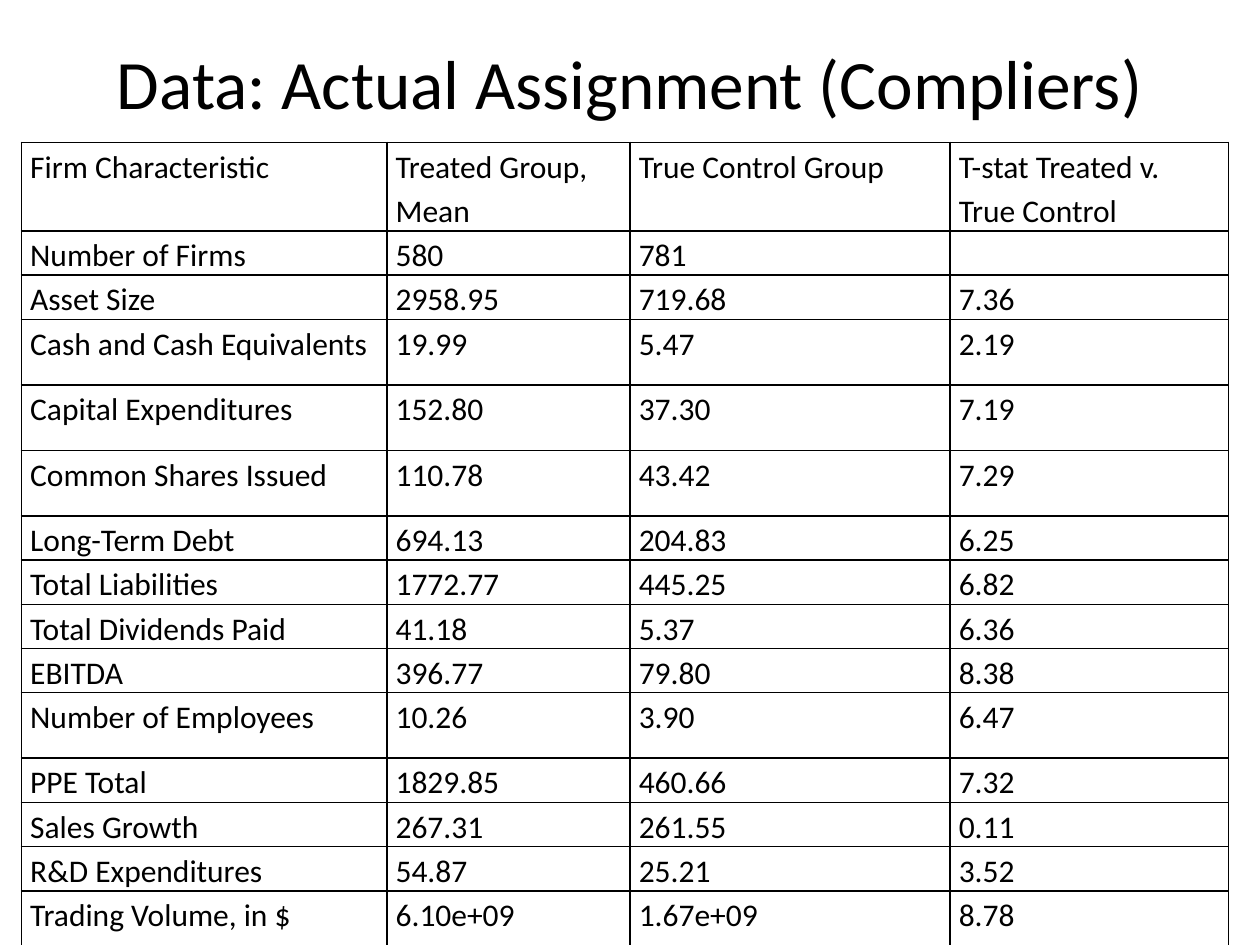
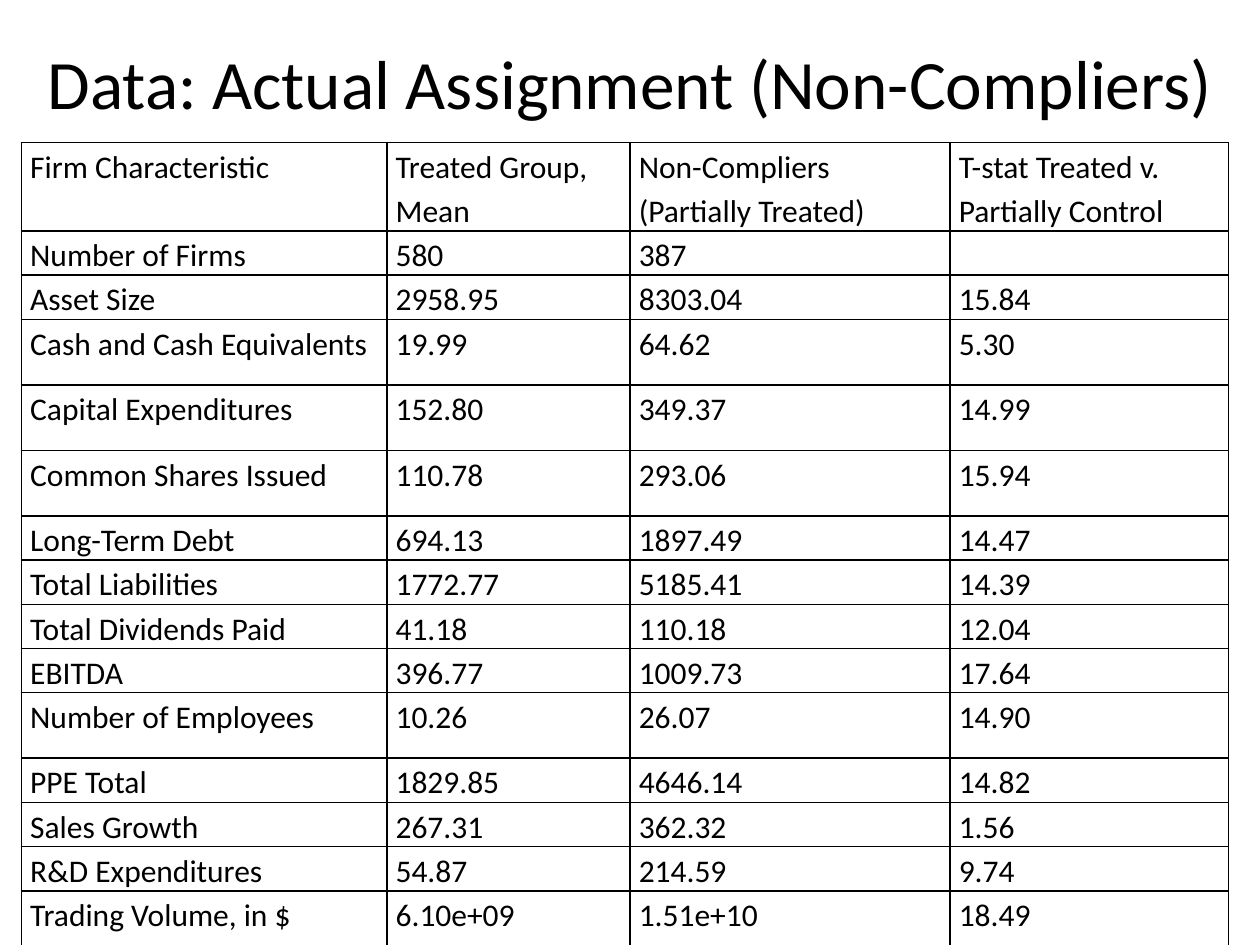
from dataclasses import dataclass

from lxml import etree
from pptx import Presentation
from pptx.dml.color import RGBColor
from pptx.enum.text import MSO_ANCHOR, MSO_AUTO_SIZE, PP_ALIGN
from pptx.oxml.ns import qn
from pptx.slide import Slide
from pptx.table import _Cell
from pptx.text.text import _Paragraph
from pptx.util import Inches, Pt

BLACK = RGBColor(0x00, 0x00, 0x00)
FONT = "Calibri"
TITLE_SIZE = Pt(39.6)
TABLE_SIZE = Pt(18)
BORDER_WIDTH = Pt(1)
CENTER = PP_ALIGN.CENTER
MIDDLE = MSO_ANCHOR.MIDDLE
NO_AUTOFIT = MSO_AUTO_SIZE.NONE
TITLE_ONLY = 5

SLIDE_WIDTH = Inches(10)
TABLE_LEFT, TABLE_TOP = Inches(0.17), Inches(1.13)
TABLE_WIDTH, TABLE_HEIGHT = Inches(9.58), Inches(6.39)
COLUMN_WIDTHS = [Inches(width) for width in (2.9, 1.93, 2.54, 2.21)]
HEADER_HEIGHT, SINGLE_HEIGHT, DOUBLE_HEIGHT = Inches(0.64), Inches(0.26), Inches(0.52)
CELL_INSET = Inches(0.07)

TALL_ROWS = {
    "Cash and Cash Equivalents",
    "Capital Expenditures",
    "Common Shares Issued",
    "Number of Employees",
    "Trading Volume, in $",
}
TREATED_MEANS = {
    "Number of Firms": "580",
    "Asset Size": "2958.95",
    "Cash and Cash Equivalents": "19.99",
    "Capital Expenditures": "152.80",
    "Common Shares Issued": "110.78",
    "Long-Term Debt": "694.13",
    "Total Liabilities": "1772.77",
    "Total Dividends Paid": "41.18",
    "EBITDA": "396.77",
    "Number of Employees": "10.26",
    "PPE Total": "1829.85",
    "Sales Growth": "267.31",
    "R&D Expenditures": "54.87",
    "Trading Volume, in $": "6.10e+09",
}


@dataclass(frozen=True)
class Comparison:
    """One slide: the treated firms set against another group."""
    title: str
    title_margin: int
    group: str
    statistic: str
    group_means: tuple[str, ...]
    t_stats: tuple[str, ...]


COMPARISONS = (
    Comparison(
        "Data: Actual Assignment (Compliers)", Inches(0.5),
        "True Control Group", "T-stat Treated v. True Control",
        ("781", "719.68", "5.47", "37.30", "43.42", "204.83", "445.25",
         "5.37", "79.80", "3.90", "460.66", "261.55", "25.21", "1.67e+09"),
        ("", "7.36", "2.19", "7.19", "7.29", "6.25", "6.82",
         "6.36", "8.38", "6.47", "7.32", "0.11", "3.52", "8.78"),
    ),
    Comparison(
        "Data: Actual Assignment (Non-Compliers)", Inches(0),
        "Non-Compliers (Partially Treated)", "T-stat Treated v. Partially Control",
        ("387", "8303.04", "64.62", "349.37", "293.06", "1897.49", "5185.41",
         "110.18", "1009.73", "26.07", "4646.14", "362.32", "214.59", "1.51e+10"),
        ("", "15.84", "5.30", "14.99", "15.94", "14.47", "14.39",
         "12.04", "17.64", "14.90", "14.82", "1.56", "9.74", "18.49"),
    ),
)


def add_span(para: _Paragraph, text: str, size: int) -> None:
    span = para.add_run()
    span.text = text
    span.font.name = FONT
    span.font.size = size
    span.font.color.rgb = BLACK


def add_title(slide: Slide, text: str, margin: int) -> None:
    box = slide.shapes.title
    box.left, box.top = margin, Inches(0.3)
    box.width, box.height = SLIDE_WIDTH - 2 * margin, Inches(0.7)
    frame = box.text_frame
    frame.auto_size = NO_AUTOFIT
    frame.word_wrap = True
    frame.vertical_anchor = MIDDLE
    para = frame.paragraphs[0]
    para.alignment = CENTER
    add_span(para, text, TITLE_SIZE)


def add_borders(cell: _Cell) -> None:
    properties = cell._tc.get_or_add_tcPr()
    for position, side in enumerate(("lnL", "lnR", "lnT", "lnB")):
        line = etree.Element(qn(f"a:{side}"), w=str(BORDER_WIDTH))
        fill = etree.SubElement(line, qn("a:solidFill"))
        etree.SubElement(fill, qn("a:srgbClr"), val=str(BLACK))
        properties.insert(position, line)


def fill_cell(cell: _Cell, text: str) -> None:
    cell.margin_left = cell.margin_right = CELL_INSET
    cell.margin_top = cell.margin_bottom = 0
    cell.fill.background()
    add_borders(cell)
    para = cell.text_frame.paragraphs[0]
    para.line_spacing = 1.15
    if text:
        add_span(para, text, TABLE_SIZE)


def row_height(label: str) -> int:
    return DOUBLE_HEIGHT if label in TALL_ROWS else SINGLE_HEIGHT


def add_comparison_table(slide: Slide, comparison: Comparison) -> None:
    header = ("Firm Characteristic", "Treated Group, Mean",
              comparison.group, comparison.statistic)
    rows = [header, *zip(TREATED_MEANS, TREATED_MEANS.values(),
                         comparison.group_means, comparison.t_stats)]
    heights = [HEADER_HEIGHT, *map(row_height, TREATED_MEANS)]

    box = slide.shapes.add_table(len(rows), len(header), TABLE_LEFT, TABLE_TOP,
                                 TABLE_WIDTH, TABLE_HEIGHT)
    table = box.table
    table.first_row = table.horz_banding = False
    for column, width in zip(table.columns, COLUMN_WIDTHS):
        column.width = width
    for row, height, texts in zip(table.rows, heights, rows):
        row.height = height
        for cell, text in zip(row.cells, texts):
            fill_cell(cell, text)
    box.height = TABLE_HEIGHT


def main() -> None:
    deck = Presentation()
    deck.slide_width, deck.slide_height = SLIDE_WIDTH, Inches(7.5)
    for comparison in COMPARISONS:
        slide = deck.slides.add_slide(deck.slide_layouts[TITLE_ONLY])
        add_title(slide, comparison.title, comparison.title_margin)
        add_comparison_table(slide, comparison)
    deck.save("out.pptx")


if __name__ == "__main__":
    main()
